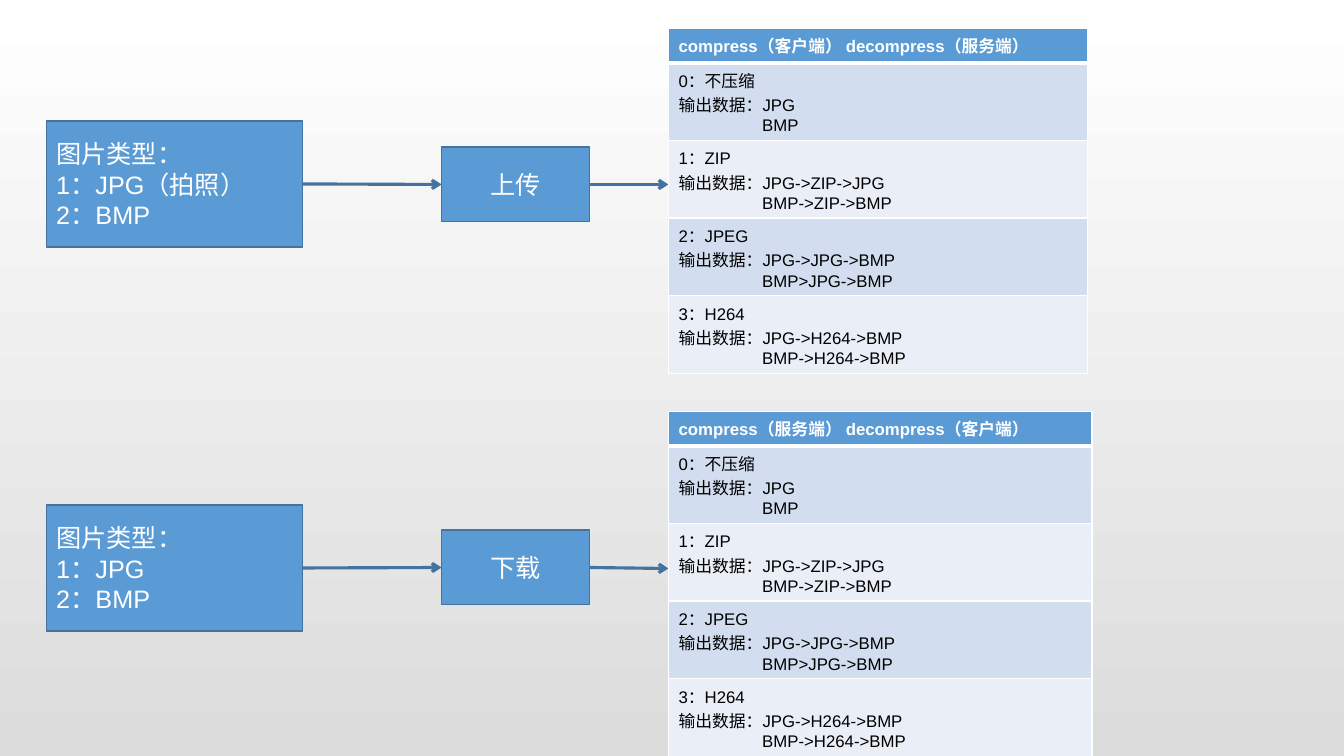
from dataclasses import dataclass

from lxml.etree import SubElement
from pptx import Presentation
from pptx.dml.color import RGBColor as Rgb
from pptx.enum.shapes import MSO_CONNECTOR as Connector, MSO_SHAPE as Shape
from pptx.enum.text import MSO_ANCHOR as Anchor, PP_ALIGN as Align
from pptx.oxml.ns import qn
from pptx.util import Inches, Pt


@dataclass(frozen=True)
class Theme:
    font: str = "Arial"
    box_size: int = 18
    table_size: int = 12
    white: str = "FFFFFF"
    black: str = "000000"
    blue: str = "5B9BD5"
    outline: str = "43739E"
    bands: tuple[str, str] = ("D2DEEF", "EAEFF7")
    background: tuple[str, str] = ("FFFFFF", "DCDCDC")


@dataclass(frozen=True)
class Flow:
    source_top: float
    source_lines: tuple[str, ...]
    action_top: float
    action: str
    arrow_end: float
    table_top: float
    table_width: float
    header: str


@dataclass(frozen=True)
class Mode:
    title: str
    first_output: str
    second_output: str


THEME = Theme()
SOURCE_LEFT, SOURCE_WIDTH, SOURCE_HEIGHT = 0.46, 2.54, 1.25
ACTION_LEFT, ACTION_WIDTH, ACTION_HEIGHT = 4.38, 1.47, 0.74
TABLE_LEFT = 6.63
HEADER_HEIGHT, ROW_HEIGHT = 0.3, 0.7
OUTPUT_INDENT = 0.83
THIN, THICK = 1, 3

FLOWS = (
    Flow(1.2, ("图片类型：", "1：JPG（拍照）", "2：BMP"), 1.46, "上传",
         1.83, 0.28, 4.16, "compress（客户端） decompress（服务端）"),
    Flow(5.01, ("图片类型：", "1：JPG", "2：BMP"), 5.26, "下载",
         5.64, 4.08, 4.2, "compress（服务端） decompress（客户端）"),
)
MODES = (
    Mode("0：不压缩", "JPG", "BMP"),
    Mode("1：ZIP", "JPG->ZIP->JPG", "BMP->ZIP->BMP"),
    Mode("2：JPEG", "JPG->JPG->BMP", "BMP>JPG->BMP"),
    Mode("3：H264", "JPG->H264->BMP", "BMP->H264->BMP"),
)


def color(value: str) -> Rgb:
    return Rgb.from_string(value)


def write_lines(frame, lines, size: int, text_color: str, bold=False, align=Align.LEFT) -> None:
    for index, line in enumerate(lines):
        paragraph = frame.paragraphs[0] if index == 0 else frame.add_paragraph()
        paragraph.alignment = align
        run = paragraph.add_run()
        run.text = line
        run.font.name = THEME.font
        run.font.size = Pt(size)
        run.font.bold = bold
        run.font.color.rgb = color(text_color)


def add_box(slide, left: float, top: float, width: float, height: float, lines, align):
    box = slide.shapes.add_shape(
        Shape.RECTANGLE, Inches(left), Inches(top), Inches(width), Inches(height))
    box.shadow.inherit = False
    box.fill.solid()
    box.fill.fore_color.rgb = color(THEME.blue)
    box.line.color.rgb = color(THEME.outline)
    box.line.width = Pt(1)
    box.text_frame.word_wrap = True
    box.text_frame.vertical_anchor = Anchor.MIDDLE
    write_lines(box.text_frame, lines, THEME.box_size, THEME.white, align=align)
    return box


def add_arrow(slide, start, end_x: float, end_y: float):
    """Draw an arrow from the right side of the start box."""
    arrow = slide.shapes.add_connector(
        Connector.STRAIGHT, start.left + start.width, start.top + start.height // 2,
        Inches(end_x), Inches(end_y))
    arrow.begin_connect(start, 3)
    arrow.line.color.rgb = color(THEME.outline)
    arrow.line.width = Pt(2.25)
    SubElement(arrow.line._get_or_add_ln(), qn("a:tailEnd"), type="arrow")
    SubElement(arrow._element.spPr, qn("a:effectLst"))
    return arrow


def style_cell(cell, fill: str, top: int, bottom: int) -> None:
    """Set white borders, with top and bottom widths in points, then the fill."""
    properties = cell._tc.get_or_add_tcPr()
    for side, width in (("L", THIN), ("R", THIN), ("T", top), ("B", bottom)):
        border = SubElement(properties, qn(f"a:ln{side}"), w=str(Pt(width)))
        border_fill = SubElement(border, qn("a:solidFill"))
        SubElement(border_fill, qn("a:srgbClr"), val=THEME.white)
    cell.fill.solid()
    cell.fill.fore_color.rgb = color(fill)


def add_mode_table(slide, flow: Flow) -> None:
    height = HEADER_HEIGHT + ROW_HEIGHT * len(MODES)
    table = slide.shapes.add_table(
        len(MODES) + 1, 1, Inches(TABLE_LEFT), Inches(flow.table_top),
        Inches(flow.table_width), Inches(height)).table
    table.horz_banding = False
    table.rows[0].height = Inches(HEADER_HEIGHT)
    header = table.cell(0, 0)
    style_cell(header, THEME.blue, THIN, THICK)
    write_lines(header.text_frame, (flow.header,), THEME.table_size, THEME.white, bold=True)

    for row, mode in enumerate(MODES, start=1):
        table.rows[row].height = Inches(ROW_HEIGHT)
        cell = table.cell(row, 0)
        style_cell(cell, THEME.bands[(row - 1) % 2], THICK if row == 1 else THIN, THIN)
        lines = (mode.title, f"输出数据：{mode.first_output}", mode.second_output)
        write_lines(cell.text_frame, lines, THEME.table_size, THEME.black)
        second_output = cell.text_frame.paragraphs[-1]
        second_output._p.get_or_add_pPr().set("marL", str(Inches(OUTPUT_INDENT)))


def add_flow(slide, flow: Flow) -> None:
    source = add_box(slide, SOURCE_LEFT, flow.source_top, SOURCE_WIDTH, SOURCE_HEIGHT,
                     flow.source_lines, Align.LEFT)
    action = add_box(slide, ACTION_LEFT, flow.action_top, ACTION_WIDTH, ACTION_HEIGHT,
                     (flow.action,), Align.CENTER)
    to_action = add_arrow(slide, source, ACTION_LEFT, flow.action_top + ACTION_HEIGHT / 2)
    to_action.end_connect(action, 1)
    add_arrow(slide, action, TABLE_LEFT, flow.arrow_end)
    add_mode_table(slide, flow)


def paint_background(slide) -> None:
    fill = slide.background.fill
    fill.gradient()
    fill.gradient_angle = 270
    for stop, value in zip(fill.gradient_stops, THEME.background):
        stop.color.rgb = color(value)


def main() -> None:
    presentation = Presentation()
    presentation.slide_width = Inches(13.33)
    presentation.slide_height = Inches(7.5)
    slide = presentation.slides.add_slide(presentation.slide_layouts[6])
    paint_background(slide)
    for flow in FLOWS:
        add_flow(slide, flow)
    presentation.save("out.pptx")


if __name__ == "__main__":
    main()
